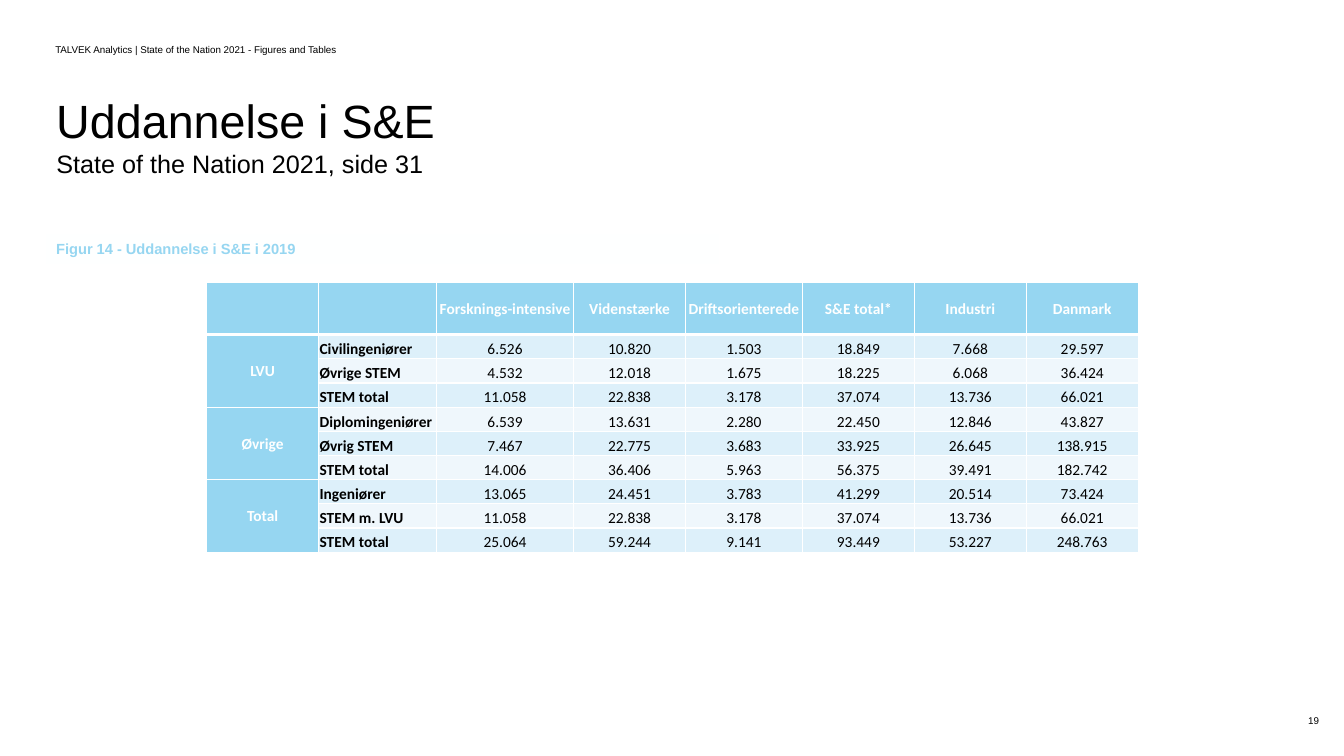
from pptx import Presentation
from pptx.dml.color import RGBColor
from pptx.enum.text import MSO_ANCHOR, PP_ALIGN
from pptx.oxml import parse_xml
from pptx.oxml.ns import nsdecls
from pptx.util import Inches, Pt

TOP, MIDDLE, BOTTOM = MSO_ANCHOR.TOP, MSO_ANCHOR.MIDDLE, MSO_ANCHOR.BOTTOM
LEFT, CENTER, RIGHT = PP_ALIGN.LEFT, PP_ALIGN.CENTER, PP_ALIGN.RIGHT

BLACK, WHITE, PAPER = "000000", "FFFFFF", "FEFFFF"
SKY, BANDS = "96D6F1", ("DDF0FA", "EFF7FC")

WIDTHS = (1.11, 1.17, 1.36, 1.11, 1.16, 1.11, 1.11, 1.11)
HEAD_ROW, BODY_ROW = 0.52, 0.24
HEADS = ("", "", "Forsknings-intensive", "Videnstærke", "Driftsorienterede",
         "S&E total*", "Industri", "Danmark")
GROUPS = {
    "LVU": (
        ("Civilingeniører", "6.526", "10.820", "1.503", "18.849", "7.668", "29.597"),
        ("Øvrige STEM", "4.532", "12.018", "1.675", "18.225", "6.068", "36.424"),
        ("STEM total", "11.058", "22.838", "3.178", "37.074", "13.736", "66.021"),
    ),
    "Øvrige": (
        ("Diplomingeniører", "6.539", "13.631", "2.280", "22.450", "12.846", "43.827"),
        ("Øvrig STEM", "7.467", "22.775", "3.683", "33.925", "26.645", "138.915"),
        ("STEM total", "14.006", "36.406", "5.963", "56.375", "39.491", "182.742"),
    ),
    "Total": (
        ("Ingeniører", "13.065", "24.451", "3.783", "41.299", "20.514", "73.424"),
        ("STEM m. LVU", "11.058", "22.838", "3.178", "37.074", "13.736", "66.021"),
        ("STEM total", "25.064", "59.244", "9.141", "93.449", "53.227", "248.763"),
    ),
}


def color(code):
    """Turn a hex string into a colour."""
    return RGBColor.from_string(code)


def add_run(para, text, size, font, code, bold=False):
    """Add one formatted run to a paragraph."""
    run = para.add_run()
    run.text = text
    run.font.size = Pt(size)
    run.font.name = font
    run.font.bold = bold
    run.font.color.rgb = color(code)


def add_label(slide, place, text, size, code=BLACK, bold=False,
              align=LEFT, anchor=TOP):
    """Add a one-line text box and return it."""
    box = slide.shapes.add_textbox(*map(Inches, place))
    frame = box.text_frame
    frame.word_wrap = True
    frame.vertical_anchor = anchor
    para = frame.paragraphs[0]
    para.alignment = align
    add_run(para, text, size, "Arial", code, bold)
    return box


def add_borders(cell, base):
    """Draw white cell borders with the given bottom width."""
    props = cell._tc.get_or_add_tcPr()
    for side, width in (("L", 1), ("R", 1), ("T", 1), ("B", base)):
        props.append(parse_xml(
            f'<a:ln{side} {nsdecls("a")} w="{Pt(width)}"><a:solidFill>'
            f'<a:srgbClr val="{WHITE}"/></a:solidFill></a:ln{side}>'))


def fill_cell(cell, text, fill, code, bold, align=CENTER, anchor=MIDDLE, base=1):
    """Style a table cell and write its text."""
    add_borders(cell, base)
    cell.fill.solid()
    cell.fill.fore_color.rgb = color(fill)
    cell.margin_left = cell.margin_right = cell.margin_top = Inches(0.01)
    cell.margin_bottom = Inches(0)
    cell.vertical_anchor = anchor
    para = cell.text_frame.paragraphs[0]
    para.alignment = align
    if text:
        add_run(para, text, 11, "Calibri", code, bold)


def add_grid(slide):
    """Add the education table with its merged row groups."""
    rows = [row for group in GROUPS.values() for row in group]
    height = HEAD_ROW + BODY_ROW * len(rows)
    table = slide.shapes.add_table(
        len(rows) + 1, len(WIDTHS), Inches(2.05), Inches(2.8),
        Inches(sum(WIDTHS)), Inches(height)).table
    table.horz_banding = False
    for column, width in zip(table.columns, WIDTHS):
        column.width = Inches(width)
    for index, row in enumerate(table.rows):
        row.height = Inches(BODY_ROW if index else HEAD_ROW)

    for col, text in enumerate(HEADS):
        fill_cell(table.cell(0, col), text, SKY, PAPER, True, base=3)
    for r, (name, *values) in enumerate(rows, 1):
        band = BANDS[(r - 1) % 2]
        fill_cell(table.cell(r, 1), name, band, BLACK, True, LEFT, BOTTOM)
        for col, value in enumerate(values, 2):
            fill_cell(table.cell(r, col), value, band, BLACK, False, anchor=BOTTOM)

    start = 1
    for name, group in GROUPS.items():
        end = start + len(group)
        for r in range(start, end):
            fill_cell(table.cell(r, 0), name if r == start else "", SKY, PAPER, True)
        table.cell(start, 0).merge(table.cell(end - 1, 0))
        start = end


def main():
    """Build the slide and save it."""
    deck = Presentation()
    deck.slide_width, deck.slide_height = Inches(13.33), Inches(7.5)
    slide = deck.slides.add_slide(deck.slide_layouts[6])
    add_label(slide, (10.18, 6.95, 3, 0.4), "19", 7, align=RIGHT, anchor=MIDDLE)
    add_label(slide, (0.45, 0.29, 4.5, 0.4),
              "TALVEK Analytics | State of the Nation 2021 - Figures and Tables",
              7, anchor=MIDDLE)
    title = add_label(slide, (0.46, 0.92, 11.56, 0.58), "Uddannelse i S&E", 33.3)
    title.text_frame.margin_top = Inches(0.1)
    title.text_frame.paragraphs[0].line_spacing = 0.8
    add_label(slide, (0.46, 1.42, 4.78, 0.4), "State of the Nation 2021, side 31", 18)
    figure = add_label(slide, (0.46, 2.33, 6.67, 0.28),
                       "Figur 14 - Uddannelse i S&E i 2019", 10.5, SKY, True)
    figure.fill.solid()
    figure.fill.fore_color.rgb = color(PAPER)
    add_grid(slide)
    deck.save("out.pptx")


if __name__ == "__main__":
    main()
